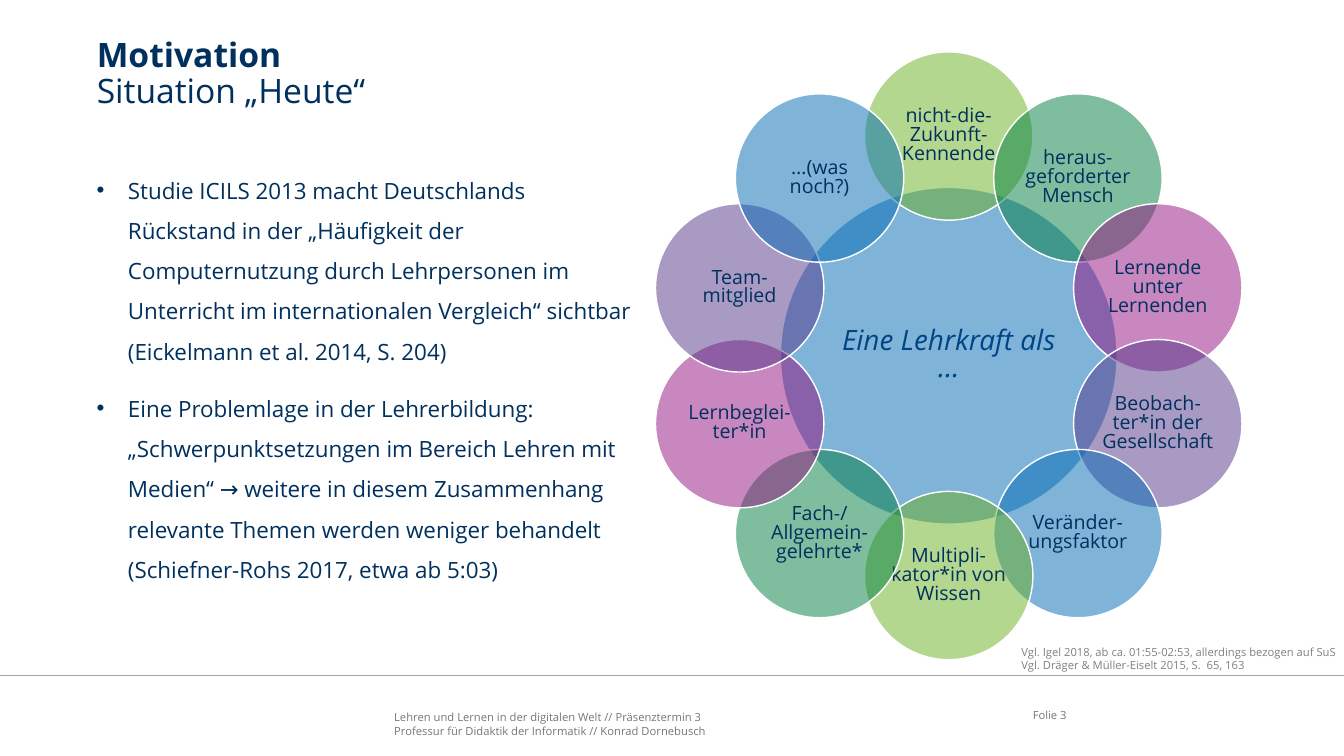
import math

import pptx
import pptx.dml.color
import pptx.enum.shapes
import pptx.enum.text
import pptx.oxml
import pptx.oxml.ns
import pptx.util

Inches, Pt = pptx.util.Inches, pptx.util.Pt
RGB = pptx.dml.color.RGBColor
ALIGN = pptx.enum.text.PP_ALIGN
ANCHOR = pptx.enum.text.MSO_ANCHOR
qn = pptx.oxml.ns.qn

# Colours
NAVY = RGB(0x00, 0x30, 0x5E)
ROYAL = RGB(0x00, 0x45, 0x88)
GREY = RGB(0x72, 0x78, 0x79)
NOTE = RGB(0x80, 0x80, 0x80)
RULE = RGB(0xA6, 0xA6, 0xA6)
WHITE = RGB(0xFF, 0xFF, 0xFF)
BLUE = RGB(0x00, 0x6A, 0xB3)
LIME = RGB(0x6A, 0xB0, 0x23)
GREEN = RGB(0x00, 0x7D, 0x40)
PINK = RGB(0x93, 0x10, 0x7E)
PURPLE = RGB(0x54, 0x37, 0x8A)
CYCLE = [LIME, GREEN, PINK, PURPLE, BLUE]

# Content
FONT = "Open Sans"
TITLE = ["Motivation", "Situation „Heute“"]
POINTS = [
    "Studie ICILS 2013 macht Deutschlands Rückstand in der „Häufigkeit der "
    "Computernutzung durch Lehrpersonen im Unterricht im internationalen "
    "Vergleich“ sichtbar (Eickelmann et al. 2014, S. 204)",
    "Eine Problemlage in der Lehrerbildung: „Schwerpunktsetzungen im Bereich "
    "Lehren mit Medien“ → weitere in diesem Zusammenhang relevante Themen "
    "werden weniger behandelt (Schiefner-Rohs 2017, etwa ab 5:03)",
]
HUB = "Eine Lehrkraft als …"
ROLES = [  # clockwise from the top
    "nicht-die-Zukunft-Kennende",
    "heraus-geforderter Mensch",
    "Lernende unter Lernenden",
    "Beobach-ter*in der Gesellschaft",
    "Veränder-ungsfaktor",
    "Multipli-kator*in von Wissen",
    "Fach-/ Allgemein-gelehrte*",
    "Lernbeglei-ter*in",
    "Team-mitglied",
    "…(was noch?)",
]
SOURCES = [
    "Vgl. Igel 2018, ab ca. 01:55-02:53, allerdings bezogen auf SuS",
    "Vgl. Dräger & Müller-Eiselt 2015, S.  65, 163",
]
FOOTER = [
    "Lehren und Lernen in der digitalen Welt // Präsenztermin 3",
    "Professur für Didaktik der Informatik // Konrad Dornebusch",
]
NUMBER = ["Folie 3"]

# Ring geometry in inches
MID_X, MID_Y, RADIUS = 9.41, 3.53, 2.18
HUB_SIZE, ROLE_SIZE = 3.34, 1.67


def style(para, size, color):
    para.font.name = FONT
    para.font.size = Pt(size)
    para.font.color.rgb = color


def inset(frame, gap):
    frame.margin_left = frame.margin_right = Inches(gap)
    frame.margin_top = frame.margin_bottom = Inches(gap)


def add_text(slide, place, lines, size, color, wrap=True):
    box = slide.shapes.add_textbox(*map(Inches, place))
    frame = box.text_frame
    frame.word_wrap = wrap
    inset(frame, 0)
    frame.text = "\n".join(lines)
    for para in frame.paragraphs:
        style(para, size, color)
    return frame


def add_disc(slide, x, y, width, fill, text, size, color, gap):
    disc = slide.shapes.add_shape(
        pptx.enum.shapes.MSO_SHAPE.OVAL,
        Inches(x - width / 2), Inches(y - width / 2),
        Inches(width), Inches(width))
    disc.shadow.inherit = False
    disc.fill.solid()
    disc.fill.fore_color.rgb = fill
    tint = disc.fill._xPr.find(qn("a:solidFill"))[0]
    pptx.oxml.xmlchemy.OxmlElement  # noqa
    alpha = tint.makeelement(qn("a:alpha"), {"val": "50000"})
    tint.append(alpha)
    disc.line.color.rgb = WHITE
    disc.line.width = Pt(1)
    frame = disc.text_frame
    frame.word_wrap = True
    frame.vertical_anchor = ANCHOR.MIDDLE
    inset(frame, gap)
    frame.text = text
    para = frame.paragraphs[0]
    para.alignment = ALIGN.CENTER
    para.line_spacing = 0.8
    style(para, size, color)
    return para


def add_bullet(para):
    props = para._p.get_or_add_pPr()
    props.set("marL", str(Inches(0.31)))
    props.set("indent", str(-Inches(0.31)))
    props.append(props.makeelement(qn("a:buFont"), {"typeface": "Arial"}))
    props.append(props.makeelement(qn("a:buChar"), {"char": "•"}))


def main():
    deck = pptx.Presentation()
    deck.slide_width, deck.slide_height = Inches(13.33), Inches(7.5)
    slide = deck.slides.add_slide(deck.slide_layouts[5])

    # Title
    title = slide.shapes.title
    title.left, title.top = Inches(0.96), Inches(0.38)
    title.width, title.height = Inches(11.57), Inches(0.75)
    frame = title.text_frame
    inset(frame, 0)
    frame.auto_size = pptx.enum.text.MSO_AUTO_SIZE.NONE
    frame.vertical_anchor = ANCHOR.TOP
    frame.text = "\v".join(TITLE)
    para = frame.paragraphs[0]
    para.alignment = ALIGN.LEFT
    para.line_spacing = 0.9
    style(para, 24, NAVY)
    para.runs[0].font.bold = True

    # Footer and rule
    add_text(slide, (3.91, 7.05, 5.67, 0.27), FOOTER, 8, GREY)
    folio = add_text(slide, (9.81, 7.03, 0.77, 0.15), NUMBER, 8, GREY)
    folio.paragraphs[0].alignment = ALIGN.RIGHT
    rule = slide.shapes.add_connector(
        pptx.enum.shapes.MSO_CONNECTOR.STRAIGHT,
        0, Inches(6.7), deck.slide_width, Inches(6.7))
    rule.line.color.rgb = RULE
    rule.line.width = Pt(1)
    props = rule._element.spPr
    props.append(props.makeelement(qn("a:effectLst"), {}))

    # Bullet points
    body = add_text(slide, (0.96, 1.62, 5.34, 4.75), POINTS, 16, NAVY)
    for index, para in enumerate(body.paragraphs):
        props = para._p.get_or_add_pPr()
        for child in list(props):
            props.remove(child)
        add_bullet(para)
        para.line_spacing = 1.5
        if index:
            para.space_before = Pt(12)
        style(para, 16, NAVY)

    # Hub and ring of roles
    hub = add_disc(slide, MID_X, MID_Y, HUB_SIZE, BLUE, HUB, 20, ROYAL, 0.03)
    hub.font.italic = True
    for index, role in enumerate(ROLES):
        angle = 2 * math.pi * index / len(ROLES)
        add_disc(slide, MID_X + RADIUS * math.sin(angle),
                 MID_Y - RADIUS * math.cos(angle), ROLE_SIZE,
                 CYCLE[index % len(CYCLE)], role, 14, NAVY, 0.02)

    # Sources
    add_text(slide, (10.13, 6.4, 3.15, 0.27), SOURCES, 8, NOTE, wrap=False)

    deck.save("out.pptx")


if __name__ == "__main__":
    main()
